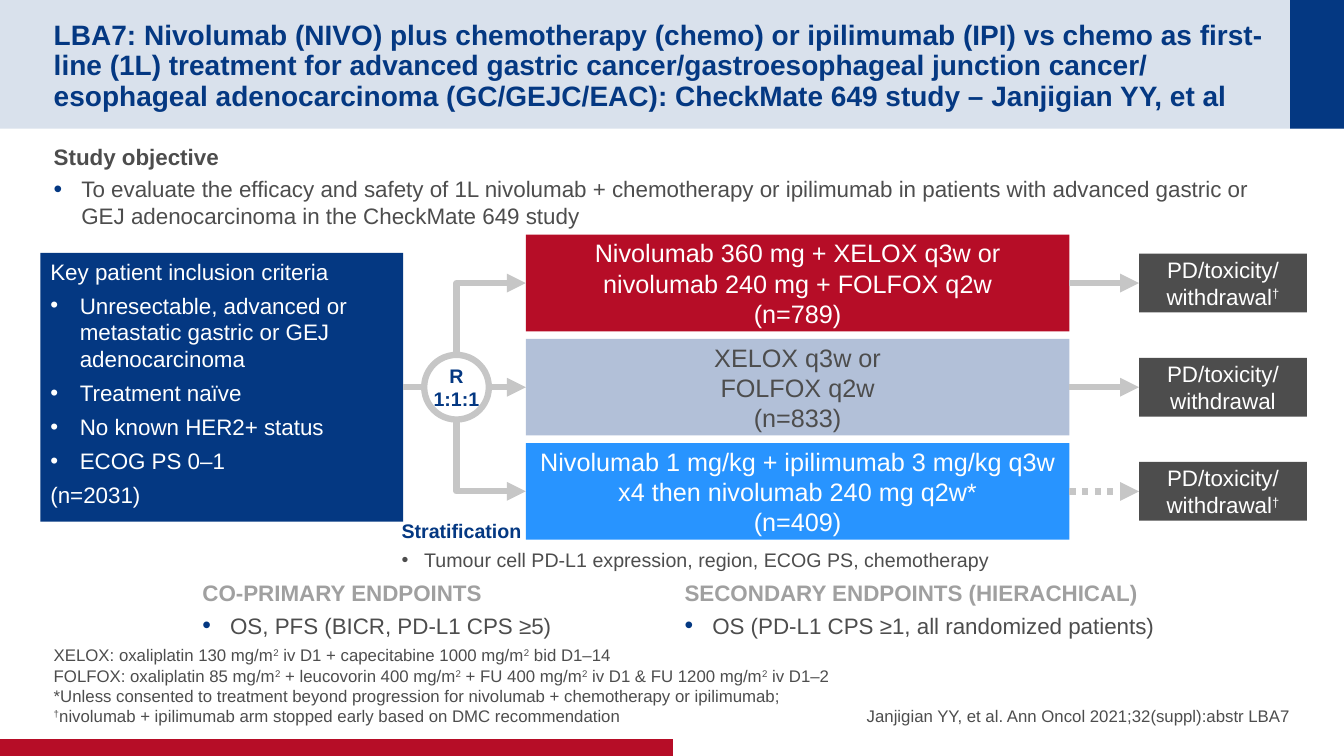
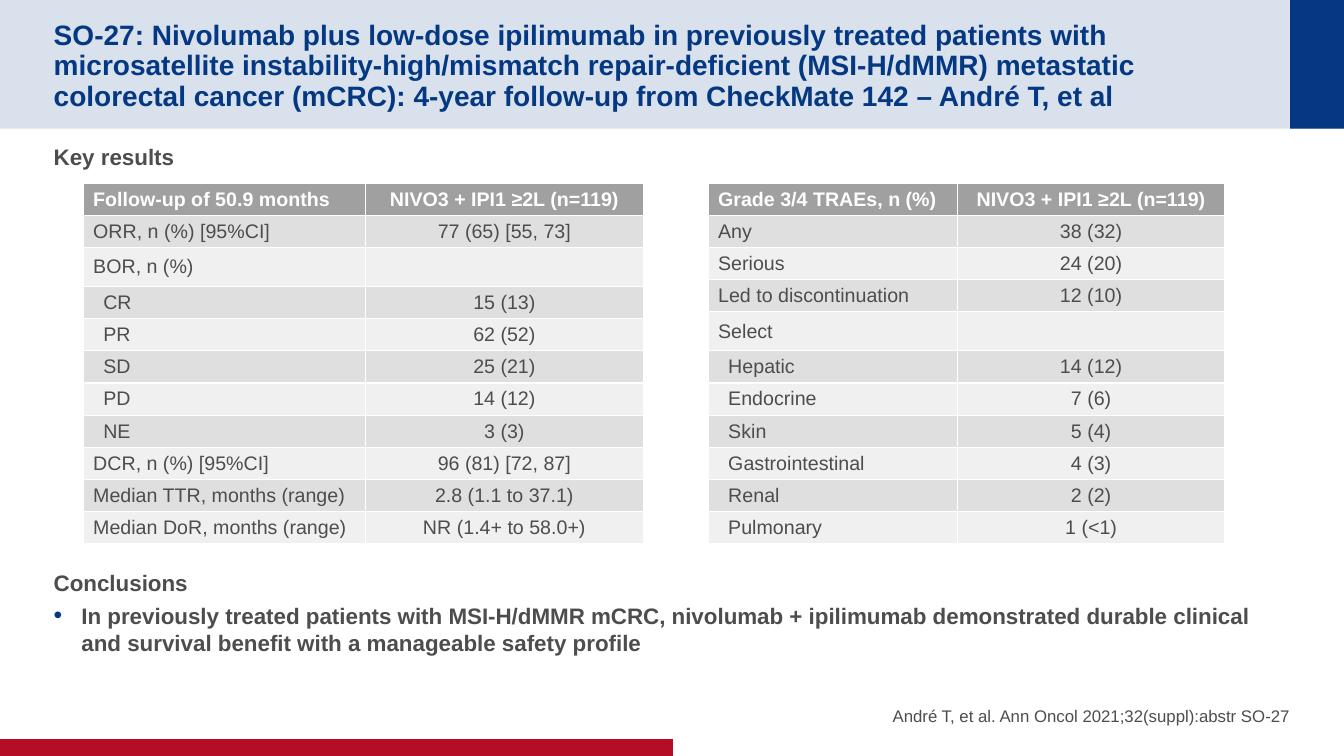
import dataclasses

import lxml.etree
import pptx
import pptx.dml.color
import pptx.enum.dml
import pptx.enum.shapes
import pptx.enum.text
import pptx.oxml.ns
import pptx.util

NAVY = pptx.dml.color.RGBColor(0x04, 0x38, 0x82)
RED = pptx.dml.color.RGBColor(0xB6, 0x0D, 0x27)
SKY = pptx.dml.color.RGBColor(0x28, 0x94, 0xFF)
MIST = pptx.dml.color.RGBColor(0xB2, 0xC0, 0xD8)
INK = pptx.dml.color.RGBColor(0x4D, 0x4D, 0x4D)
GREY = pptx.dml.color.RGBColor(0xA0, 0xA0, 0xA0)
RULE = pptx.dml.color.RGBColor(0xC6, 0xC6, 0xC6)
ROW_DARK = pptx.dml.color.RGBColor(0xDF, 0xDF, 0xDF)
ROW_LIGHT = pptx.dml.color.RGBColor(0xF0, 0xF0, 0xF0)
WHITE = pptx.dml.color.RGBColor(0xFF, 0xFF, 0xFF)

FONT = "Arial"
COLUMNS, ROWS = 160, 90
MARGIN, BAND = 6.4, 15.3
TOP, LEFT, BOTTOM, RIGHT = range(4)
ALIGN = pptx.enum.text.PP_ALIGN
ANCHOR = pptx.enum.text.MSO_ANCHOR
SHAPE = pptx.enum.shapes.MSO_SHAPE
CONNECTOR = pptx.enum.shapes.MSO_CONNECTOR
qn = pptx.oxml.ns.qn


@dataclasses.dataclass
class Para:
    """One paragraph; ^ marks switch superscript on and off."""
    text: str
    color: pptx.dml.color.RGBColor = INK
    bold: bool = False
    align: ALIGN = ALIGN.LEFT
    after: float = 4
    indent: float = 0
    bullet: pptx.dml.color.RGBColor = None
    bullet_size: int = 110
    leading: float = None


class Deck:
    """Holds the style, the grid and the current slide."""

    def __init__(self):
        self.deck = pptx.Presentation()
        self.deck.slide_width = pptx.util.Inches(13.33)
        self.deck.slide_height = pptx.util.Inches(7.5)
        self.layout = self.deck.slide_layouts[5]
        self.slide = None
        self.dress_layout()

    def x(self, columns):
        return pptx.util.Emu(int(self.deck.slide_width * columns / COLUMNS))

    def y(self, rows):
        return pptx.util.Emu(int(self.deck.slide_height * rows / ROWS))

    def place(self, left, top, width, height):
        return self.x(left), self.y(top), self.x(width), self.y(height)

    def dress_layout(self):
        for holder in list(self.layout.placeholders)[1:]:
            self.layout.shapes.element.remove(holder.element)
        scratch = pptx.Presentation()
        self.slide = scratch.slides.add_slide(scratch.slide_layouts[5])
        band = self.box((0, 0, COLUMNS, BAND), NAVY)
        color = band.element.spPr.find(".//" + qn("a:srgbClr"))
        lxml.etree.SubElement(color, qn("a:alpha"), val="15000")
        corner = self.box((COLUMNS - MARGIN, 0, MARGIN, BAND), NAVY)
        foot = self.box((0, 88, 80.1, 2), RED)
        for index, shape in enumerate((band, corner, foot)):
            self.layout.shapes.element.insert(2 + index, shape.element)

    def start_slide(self, title, citation, title_width=147.2):
        self.slide = self.deck.slides.add_slide(self.layout)
        holder = self.slide.shapes.title
        holder.left, holder.top, holder.width, holder.height = self.place(
            MARGIN, 2.4, title_width, 10.5)
        self.fill_frame(holder.text_frame, [Para(title, NAVY, True, after=0, leading=0.9)],
                        20, ANCHOR.MIDDLE, (0, 0.6, 0, 0))
        self.text((81.4, 80, 72.2, 6.4), [Para(citation, align=ALIGN.RIGHT)],
                  12, ANCHOR.BOTTOM, inset=(0, 0, 0, 0))

    def fill_frame(self, frame, paras, size, anchor=ANCHOR.TOP,
                   inset=(1.2, 0.6, 1.2, 0.6), wrap=True):
        frame.auto_size = pptx.enum.text.MSO_AUTO_SIZE.NONE
        frame.word_wrap = wrap
        frame.vertical_anchor = anchor
        frame.margin_left, frame.margin_right = self.x(inset[0]), self.x(inset[2])
        frame.margin_top, frame.margin_bottom = self.y(inset[1]), self.y(inset[3])
        for index, item in enumerate(paras):
            para = frame.add_paragraph() if index else frame.paragraphs[0]
            self.fill_para(para, item, size)

    def fill_para(self, para, item, size):
        para.alignment = item.align
        para.space_before = pptx.util.Pt(0)
        para.space_after = pptx.util.Pt(item.after)
        if item.leading:
            para.line_spacing = item.leading
        props = para._p.get_or_add_pPr()
        props.set("marL", str(self.x(item.indent)))
        props.set("indent", str(-self.x(item.indent) if item.bullet else 0))
        if item.bullet:
            color = lxml.etree.SubElement(props, qn("a:buClr"))
            lxml.etree.SubElement(color, qn("a:srgbClr"), val=str(item.bullet))
            lxml.etree.SubElement(props, qn("a:buSzPct"), val=str(item.bullet_size * 1000))
            lxml.etree.SubElement(props, qn("a:buFont"), typeface=FONT)
            lxml.etree.SubElement(props, qn("a:buChar"), char="•")
        for index, text in enumerate(item.text.split("^")):
            for number, line in enumerate(text.split("\n")):
                if number:
                    para.add_line_break()
                if line:
                    self.add_span(para, line, item, size, index % 2)

    def add_span(self, para, text, item, size, raised):
        span = para.add_run()
        span.text = text
        span.font.name = FONT
        span.font.size = pptx.util.Pt(size)
        span.font.bold = item.bold
        span.font.color.rgb = item.color
        if raised:
            span.font._element.set("baseline", "30000")

    def text(self, area, paras, size=16, anchor=ANCHOR.TOP, inset=(0, 0.6, 0, 0.6)):
        box = self.slide.shapes.add_textbox(*self.place(*area))
        self.fill_frame(box.text_frame, paras, size, anchor, inset)

    def box(self, area, fill=None, kind=SHAPE.RECTANGLE):
        shape = self.slide.shapes.add_shape(kind, *self.place(*area))
        shape.shadow.inherit = False
        if fill is None:
            shape.fill.background()
            shape.line.color.rgb = RULE
            shape.line.width = pptx.util.Pt(4.5)
        else:
            shape.fill.solid()
            shape.fill.fore_color.rgb = fill
            shape.line.fill.background()
        return shape

    def label(self, area, fill, text, size, color=WHITE):
        shape = self.box(area, fill)
        self.fill_frame(shape.text_frame, [Para(text, color, align=ALIGN.CENTER, after=0)],
                        size, ANCHOR.MIDDLE, (1.2, 0, 1.2, 0))
        return shape

    def join(self, begin, begin_side, end, end_side, arrow=None, dash=None):
        bent = begin_side % 2 != end_side % 2
        line = self.slide.shapes.add_connector(
            CONNECTOR.ELBOW if bent else CONNECTOR.STRAIGHT, 0, 0, 0, 0)
        line.begin_connect(begin, begin_side)
        line.end_connect(end, end_side)
        ends = (("a:stCxn", begin, begin_side), ("a:endCxn", end, end_side))
        for tag, shape, side in ends:
            if shape.auto_shape_type == SHAPE.OVAL:
                line.element.find(".//" + qn(tag)).set("idx", str(side * 2))
        props = line.element.spPr
        if bent:
            props.find(qn("a:prstGeom")).set("prst", "bentConnector2")
        line.line.color.rgb = RULE
        line.line.width = pptx.util.Pt(4.5)
        if dash:
            line.line.dash_style = dash
        if arrow:
            lxml.etree.SubElement(props.find(qn("a:ln")), qn(arrow), type="triangle")
        lxml.etree.SubElement(props, qn("a:effectLst"))

    def table(self, left, top, widths, rows, row_height=3.83):
        area = self.place(left, top, sum(widths), row_height * len(rows))
        table = self.slide.shapes.add_table(len(rows), len(widths), *area).table
        for column, width in zip(table.columns, widths):
            column.width = self.x(width)
        for r, values in enumerate(rows):
            table.rows[r].height = self.y(row_height)
            fill = GREY if r == 0 else ROW_DARK if r % 2 else ROW_LIGHT
            for c, value in enumerate(values):
                self.fill_cell(table.cell(r, c), value, fill, r == 0, c > 0)

    def fill_cell(self, cell, value, fill, heading, centred):
        cell.fill.solid()
        cell.fill.fore_color.rgb = fill
        cell.vertical_anchor = ANCHOR.MIDDLE
        cell.margin_left = cell.margin_right = self.x(1.2)
        cell.margin_top = cell.margin_bottom = self.y(0.5)
        item = Para(value.lstrip(">"), WHITE if heading else INK, heading,
                    ALIGN.CENTER if centred else ALIGN.LEFT, 0,
                    1.2 if value.startswith(">") else 0)
        self.fill_para(cell.text_frame.paragraphs[0], item, 14)


def bullet(text, bold=False):
    """Return a body bullet with a navy dot."""
    return Para(text, bold=bold, indent=3.3, bullet=NAVY)


def design_slide(deck):
    """Draw the study design slide."""
    deck.start_slide(
        "LBA7: Nivolumab (NIVO) plus chemotherapy (chemo) or ipilimumab (IPI) vs chemo as "
        "first-line (1L) treatment for advanced gastric cancer/gastroesophageal junction cancer/ "
        "esophageal adenocarcinoma (GC/GEJC/EAC): CheckMate 649 study – Janjigian YY, et al",
        "Janjigian YY, et al. Ann Oncol 2021;32(suppl):abstr LBA7")
    deck.text((MARGIN, 16.4, 147.2, 11.6), [
        Para("Study objective", bold=True),
        bullet("To evaluate the efficacy and safety of 1L nivolumab + chemotherapy or ipilimumab in "
               "patients with advanced gastric or GEJ adenocarcinoma in the CheckMate 649 study")])
    deck.text((MARGIN, 80, 96.2, 6.4), [Para(
        "XELOX: oxaliplatin 130 mg/m^2^ iv D1 + capecitabine 1000 mg/m^2^ bid D1–14\n"
        "FOLFOX: oxaliplatin 85 mg/m^2^ + leucovorin 400 mg/m^2^ + FU 400 mg/m^2^ iv D1 "
        "& FU 1200 mg/m^2^ iv D1–2\n"
        "*Unless consented to treatment beyond progression for nivolumab + chemotherapy or "
        "ipilimumab;\n^†^nivolumab + ipilimumab arm stopped early based on DMC recommendation")],
        12, ANCHOR.BOTTOM, (0, 0, 0, 0))

    middle, pitch = 46.1, 12.4
    criteria = deck.box((4.8, middle - 16, 43.2, 32), NAVY)
    points = ("Unresectable, advanced or metastatic gastric or GEJ adenocarcinoma",
              "Treatment naïve", "No known HER2+ status", "ECOG PS 0–1")
    deck.fill_frame(criteria.text_frame, [
        Para("Key patient inclusion criteria", WHITE, after=5),
        *(Para(point, WHITE, after=5, indent=3.5, bullet=WHITE, bullet_size=100)
          for point in points),
        Para("(n=2031)", WHITE, after=5)], 16)
    circle = deck.box((50.5, middle - 3.85, 7.7, 7.7), kind=SHAPE.OVAL)
    deck.fill_frame(circle.text_frame,
                    [Para(text, NAVY, True, ALIGN.CENTER, 0) for text in ("R", "1:1:1")],
                    14, ANCHOR.MIDDLE, wrap=False)
    deck.join(criteria, RIGHT, circle, LEFT)

    arms = (
        ("Nivolumab 360 mg + XELOX q3w or nivolumab 240 mg + FOLFOX q2w\n(n=789)",
         RED, WHITE, "^†^", TOP, None),
        ("XELOX q3w or\nFOLFOX q2w\n(n=833)", MIST, INK, "", RIGHT, None),
        ("Nivolumab 1 mg/kg + ipilimumab 3 mg/kg q3w x4 then nivolumab 240 mg q2w*\n(n=409)",
         SKY, WHITE, "^†^", BOTTOM, pptx.enum.dml.MSO_LINE.ROUND_DOT),
    )
    for index, (text, fill, color, mark, side, dash) in enumerate(arms):
        centre = middle + (index - 1) * pitch
        arm = deck.label((62.6, centre - 5.75, 64.7, 11.5), fill, text, 18, color)
        outcome = deck.label((135.6, centre - 3.5, 20, 7), INK,
                             "PD/toxicity/\nwithdrawal" + mark, 16)
        deck.join(arm, LEFT, circle, side, "a:headEnd")
        deck.join(arm, RIGHT, outcome, LEFT, "a:tailEnd", dash)

    deck.text((46.6, 61.2, 83.6, 7), [
        Para("Stratification", NAVY, True),
        Para("Tumour cell PD-L1 expression, region, ECOG PS, chemotherapy",
             after=2, indent=2.7, bullet=INK, bullet_size=100)],
        14, inset=(1.2, 0.6, 1.2, 0.6))
    endpoints = ((24.1, 54.2, "CO-PRIMARY ENDPOINTS", "OS, PFS (BICR, PD-L1 CPS ≥5)"),
                 (81.5, 60, "SECONDARY ENDPOINTS (HIERACHICAL)",
                  "OS (PD-L1 CPS ≥1, all randomized patients)"))
    for left, width, heading, detail in endpoints:
        deck.text((left, 68.4, width, 9), [Para(heading, GREY, True), bullet(detail)])


def results_slide(deck):
    """Draw the key results slide."""
    deck.start_slide(
        "SO-27: Nivolumab plus low-dose ipilimumab in previously treated patients with "
        "microsatellite instability-high/mismatch repair-deficient (MSI-H/dMMR) metastatic "
        "colorectal cancer (mCRC): 4-year follow-up from CheckMate 142 – André T, et al",
        "André T, et al. Ann Oncol 2021;32(suppl):abstr SO-27", 144.1)
    deck.text((MARGIN, 16.4, 147.2, 5), [Para("Key results", bold=True)])
    arm = "NIVO3 + IPI1 ≥2L (n=119)"
    deck.table(9.9, 21.8, (33.6, 33.1), (
        ("Follow-up of 50.9 months", arm),
        ("ORR, n (%) [95%CI]", "77 (65) [55, 73]"), ("BOR, n (%)", ""),
        (">CR", "15 (13)"), (">PR", "62 (52)"), (">SD", "25 (21)"),
        (">PD", "14 (12)"), (">NE", "3 (3)"),
        ("DCR, n (%) [95%CI]", "96 (81) [72, 87]"),
        ("Median TTR, months (range)", "2.8 (1.1 to 37.1)"),
        ("Median DoR, months (range)", "NR (1.4+ to 58.0+)")))
    deck.table(84.3, 21.8, (29.7, 31.8), (
        ("Grade 3/4 TRAEs, n (%)", arm),
        ("Any", "38 (32)"), ("Serious", "24 (20)"),
        ("Led to discontinuation", "12 (10)"), ("Select", ""),
        (">Hepatic", "14 (12)"), (">Endocrine", "7 (6)"), (">Skin", "5 (4)"),
        (">Gastrointestinal", "4 (3)"), (">Renal", "2 (2)"), (">Pulmonary", "1 (<1)")))
    deck.text((MARGIN, 67.2, 147.2, 11.6), [
        Para("Conclusions", bold=True),
        bullet("In previously treated patients with MSI-H/dMMR mCRC, nivolumab + ipilimumab "
               "demonstrated durable clinical and survival benefit with a manageable safety "
               "profile", True)])


def main():
    """Build both slides and save them."""
    deck = Deck()
    design_slide(deck)
    results_slide(deck)
    deck.deck.save("out.pptx")


if __name__ == "__main__":
    main()
